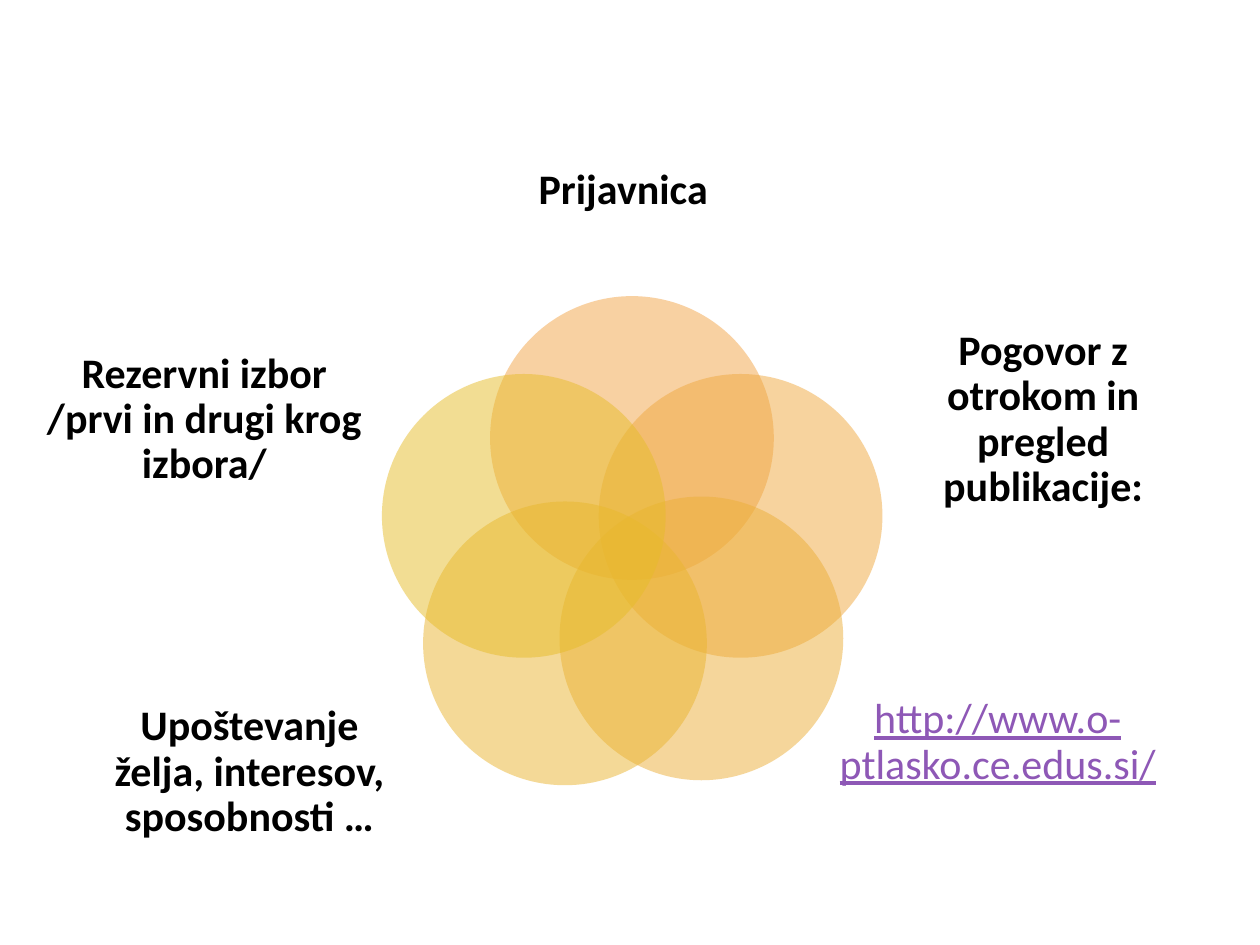
"""Build a slide with five overlapping petals and a label beside each."""
from lxml import etree
from pptx import Presentation
from pptx.dml.color import RGBColor
from pptx.enum.shapes import MSO_SHAPE
from pptx.enum.text import MSO_ANCHOR, PP_ALIGN
from pptx.oxml.ns import qn
from pptx.util import Cm, Pt

OVAL = MSO_SHAPE.OVAL
MIDDLE = MSO_ANCHOR.MIDDLE
CENTER = PP_ALIGN.CENTER

COLORS = {
    "top": "F3A447",
    "right": "F0A93F",
    "lower_right": "EDAF38",
    "lower_left": "EAB530",
    "left": "E7BC29",
    "text": "000000",
    "link": "8E58B6",
}
DIAMETER = 5.72
UPPER_ROW, LOWER_ROW, ROW_HEIGHT = 6.38, 13.49, 4.17
LINK_FORMAT = {"color": "link", "bold": False, "underline": True, "bottom": 1.2}

PETALS = [
    ("top", (9.88, 5.97), "Prijavnica", (9.25, 1.93, 6.63, 3.84), {}),
    ("right", (12.07, 7.54), "Pogovor z otrokom in pregled publikacije:",
     (18.06, UPPER_ROW, 5.94, ROW_HEIGHT), {}),
    ("lower_right", (11.28, 10.01), "http://www.o-ptlasko.ce.edus.si/",
     (15.85, LOWER_ROW, 8.53, ROW_HEIGHT), LINK_FORMAT),
    ("lower_left", (8.53, 10.11), "Upoštevanje želja, interesov, sposobnosti …",
     (2.06, LOWER_ROW, 5.94, ROW_HEIGHT), {}),
    ("left", (7.7, 7.54), "Rezervni izbor /prvi in drugi krog izbora/",
     (0.69, UPPER_ROW, 6.86, ROW_HEIGHT), {}),
]


def add_petal(page, name, corner):
    petal = page.shapes.add_shape(OVAL, *map(Cm, (*corner, DIAMETER, DIAMETER)))
    petal.shadow.inherit = False
    petal.line.fill.background()
    petal.fill.solid()
    petal.fill.fore_color.rgb = RGBColor.from_string(COLORS[name])
    color = petal.fill._xPr.find(qn("a:solidFill"))[0]
    etree.SubElement(color, qn("a:alpha"), val="50000")


def add_label(page, text, place, color="text", bold=True, underline=False, bottom=0):
    box = page.shapes.add_textbox(*map(Cm, place))
    frame = box.text_frame
    frame.word_wrap = True
    frame.vertical_anchor = MIDDLE
    frame.margin_left = frame.margin_right = frame.margin_top = 0
    frame.margin_bottom = Cm(bottom)
    para = frame.paragraphs[0]
    para.alignment = CENTER
    para.line_spacing = 0.9
    span = para.add_run()
    span.text = text
    span.font.name = "Calibri"
    span.font.size = Pt(24)
    span.font.bold = bold
    span.font.underline = underline
    span.font.color.rgb = RGBColor.from_string(COLORS[color])


def main():
    deck = Presentation()
    deck.slide_width, deck.slide_height = Cm(25.4), Cm(19.05)
    page = deck.slides.add_slide(deck.slide_layouts[6])
    for name, corner, text, place, style in PETALS:
        add_petal(page, name, corner)
        add_label(page, text, place, **style)
    deck.save("out.pptx")


if __name__ == "__main__":
    main()
